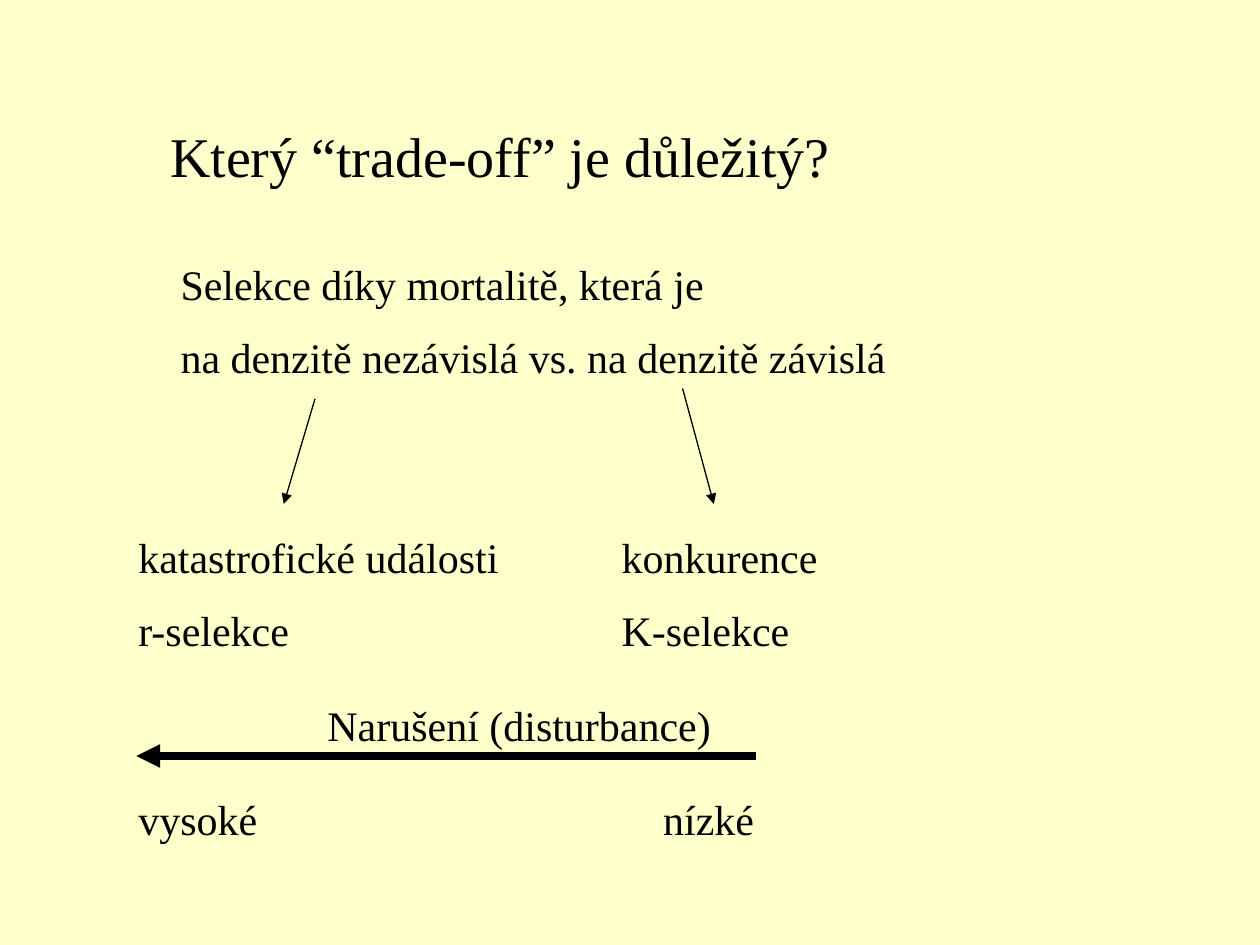
from dataclasses import dataclass

from lxml import etree
from pptx import Presentation
from pptx.dml.color import RGBColor
from pptx.enum.shapes import MSO_CONNECTOR
from pptx.enum.text import MSO_ANCHOR, MSO_AUTO_SIZE
from pptx.oxml.ns import qn
from pptx.util import Cm, Pt

STRAIGHT = MSO_CONNECTOR.STRAIGHT
TOP = MSO_ANCHOR.TOP
GROW = MSO_AUTO_SIZE.SHAPE_TO_FIT_TEXT


@dataclass(frozen=True)
class Theme:
    background: RGBColor = RGBColor(0xFF, 0xFF, 0xCC)
    ink: RGBColor = RGBColor(0, 0, 0)
    font: str = "Times New Roman"
    title: int = 32
    body: int = 24
    gap: int = 13
    thin: float = 0.75
    thick: float = 4.5


THEME = Theme()
LEFT, SELECTION_TOP, SCALE_TOP = 2.54, 10.58, 15.88
DISTURBANCE_Y, ARROW_TIP_Y = 15.24, 10.16

# left, top, width, size, lines
TEXTS = [
    (3.18, 2.33, 19.9, THEME.title, ["Který “trade-off” je důležitý?"]),
    (3.39, 5.08, 18.63, THEME.body,
     ["Selekce díky mortalitě, která je",
      "na denzitě nezávislá vs. na denzitě závislá"]),
    (LEFT, SELECTION_TOP, 8.26, THEME.body,
     ["katastrofické události", "r-selekce"]),
    (12.28, SELECTION_TOP, 8.05, THEME.body, ["konkurence", "K-selekce"]),
    (6.35, 13.97, 9.31, THEME.body, ["Narušení (disturbance)"]),
    (LEFT, SCALE_TOP, 4.02, THEME.body, ["vysoké"]),
    (13.12, SCALE_TOP, 3.6, THEME.body, ["nízké"]),
]
ARROWS = [
    ((6.35, 8.04), (5.72, ARROW_TIP_Y), THEME.thin),
    ((13.76, 7.83), (14.39, ARROW_TIP_Y), THEME.thin),
    ((15.24, DISTURBANCE_Y), (2.75, DISTURBANCE_Y), THEME.thick),
]


def add_text(slide, left, top, width, size, lines):
    height = 1.27 + 1.52 * (len(lines) - 1) if size == THEME.body else 1.6
    box = slide.shapes.add_textbox(Cm(left), Cm(top), Cm(width), Cm(height))
    frame = box.text_frame
    frame.word_wrap = True
    frame.auto_size = GROW
    frame.vertical_anchor = TOP
    for index, line in enumerate(lines):
        paragraph = frame.add_paragraph() if index else frame.paragraphs[0]
        if index:
            paragraph.space_before = Pt(THEME.gap)
        run = paragraph.add_run()
        run.text = line
        run.font.name = THEME.font
        run.font.size = Pt(size)
        run.font.color.rgb = THEME.ink


def add_arrow(slide, start, end, weight):
    points = [Cm(value) for value in (*start, *end)]
    arrow = slide.shapes.add_connector(STRAIGHT, *points)
    arrow.line.color.rgb = THEME.ink
    arrow.line.width = Pt(weight)
    etree.SubElement(arrow.line._get_or_add_ln(), qn("a:tailEnd"), type="triangle")
    etree.SubElement(arrow._element.spPr, qn("a:effectLst"))


def main():
    """Build the slide on trade-offs between r- and K-selection."""
    deck = Presentation()
    deck.slide_width, deck.slide_height = Cm(25.4), Cm(19.05)
    slide = deck.slides.add_slide(deck.slide_layouts[6])
    slide.background.fill.solid()
    slide.background.fill.fore_color.rgb = THEME.background
    for arrow in ARROWS:
        add_arrow(slide, *arrow)
    for text in TEXTS:
        add_text(slide, *text)
    deck.save("out.pptx")


if __name__ == "__main__":
    main()
